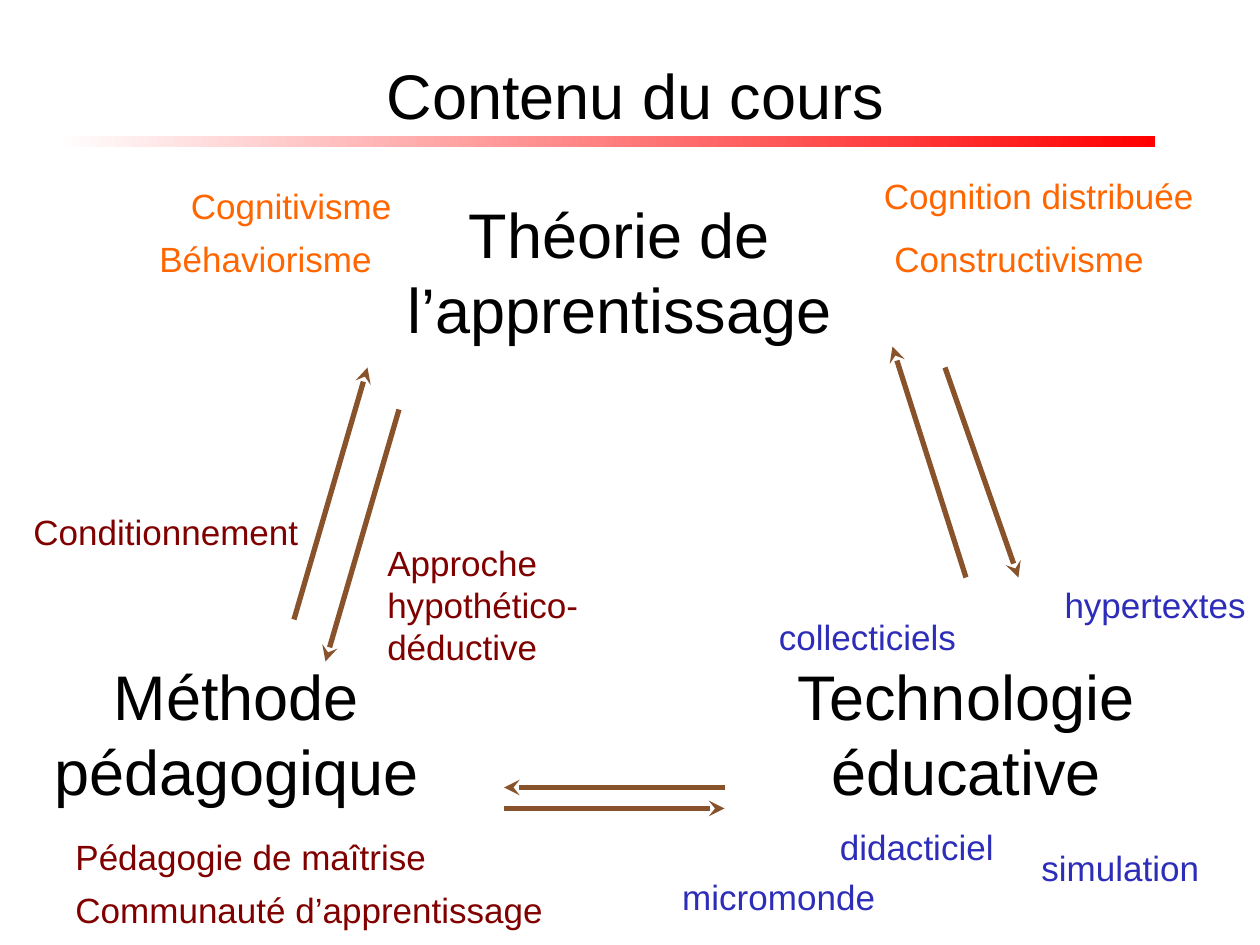
import pptx
import pptx.dml.color
import pptx.enum.shapes
import pptx.enum.text
import pptx.oxml.ns
import pptx.util
from dataclasses import dataclass
from lxml import etree


@dataclass(frozen=True)
class Theme:
    font: str = "Arial"
    heading: int = 36
    label: int = 20
    stroke: int = 3
    ink: str = "000000"
    paper: str = "FFFFFF"
    accent: str = "FF0000"
    arrow: str = "88522B"
    theory: str = "FF6600"
    method: str = "800000"
    technology: str = "2D2DB9"


class Deck:
    COLS, ROWS = 120, 90

    def __init__(self, prs, theme):
        self.prs, self.theme = prs, theme
        self.s = prs.slides.add_slide(prs.slide_layouts[5])

    def x(self, cols):
        return round(self.prs.slide_width * cols / self.COLS)

    def y(self, rows):
        return round(self.prs.slide_height * rows / self.ROWS)

    def box(self, col, row, cols, rows):
        return self.x(col), self.y(row), self.x(cols), self.y(rows)

    def color(self, name):
        return pptx.dml.color.RGBColor.from_string(getattr(self.theme, name))

    def style_text(self, tf, text, size, color, align):
        tf.text = text
        for p in tf.paragraphs:
            p.alignment = align
            for r in p.runs:
                r.font.name = self.theme.font
                r.font.size = pptx.util.Pt(size)
                r.font.color.rgb = self.color(color)

    def title(self, text, *box):
        sp = self.s.shapes.title
        sp.left, sp.top, sp.width, sp.height = self.box(*box)
        tf = sp.text_frame
        tf.vertical_anchor = pptx.enum.text.MSO_ANCHOR.MIDDLE
        self.style_text(tf, text, self.theme.heading, "ink",
                        pptx.enum.text.PP_ALIGN.CENTER)

    def rule(self, *box):
        sp = self.s.shapes.add_shape(
            pptx.enum.shapes.MSO_SHAPE.RECTANGLE, *self.box(*box))
        sp.shadow.inherit = False
        sp.line.fill.background()
        sp.fill.gradient()
        sp.fill.gradient_angle = 0
        for stop, name in zip(sp.fill.gradient_stops, ("paper", "accent")):
            stop.color.rgb = self.color(name)

    def text(self, text, box, size, color, align, wrap):
        tf = self.s.shapes.add_textbox(*self.box(*box)).text_frame
        tf.word_wrap = wrap
        tf.auto_size = pptx.enum.text.MSO_AUTO_SIZE.SHAPE_TO_FIT_TEXT
        self.style_text(tf, text, size, color, align)

    def pole(self, text, col, row, cols):
        self.text(text, (col, row, cols, 15.7), self.theme.heading, "ink",
                  pptx.enum.text.PP_ALIGN.CENTER, True)

    def label(self, text, color, col, row, cols, rows=5.25, wrap=False):
        self.text(text, (col, row, cols, rows), self.theme.label, color,
                  pptx.enum.text.PP_ALIGN.LEFT, wrap)

    def arrow(self, col1, row1, col2, row2):
        c = self.s.shapes.add_connector(
            pptx.enum.shapes.MSO_CONNECTOR.STRAIGHT,
            self.x(col1), self.y(row1), self.x(col2), self.y(row2))
        c.line.color.rgb = self.color("arrow")
        c.line.width = pptx.util.Pt(self.theme.stroke)
        qn = pptx.oxml.ns.qn
        props = c.element.spPr
        etree.SubElement(props.find(qn("a:ln")), qn("a:tailEnd"), type="stealth")
        etree.SubElement(props, qn("a:effectLst"))


POLES = [
    ("Méthode pédagogique", 0, 62, 45),
    ("Théorie de l’apprentissage", 30, 18, 58),
    ("Technologie éducative", 63, 62, 58),
]

ARROWS = [
    (38, 39, 31, 63),
    (28, 59, 35, 35),
    (90, 35, 97, 55),
    (92, 55, 85, 33),
    (69, 75, 48, 75),
    (48, 77, 69, 77),
]

LABELS = {
    "theory": [
        ("Béhaviorisme", 14, 22, 22.8),
        ("Cognitivisme", 17, 17, 21.7),
        ("Constructivisme", 84, 22, 26.4),
        ("Cognition distribuée", 83, 16, 32.2),
    ],
    "method": [
        ("Conditionnement", 2, 48, 27.8),
        ("Approche\nhypothético-déductive", 35.7, 51, 32.3, 13.3, True),
        ("Pédagogie de maîtrise", 6, 79, 36.1),
        ("Communauté d’apprentissage", 6, 84, 47.3),
    ],
    "technology": [
        ("collecticiels", 73, 58, 19.4),
        ("hypertextes", 100.2, 55, 19.8),
        ("didacticiel", 78.8, 78, 17.2),
        ("micromonde", 63.8, 82.8, 20.9),
        ("simulation", 98, 80, 17.6),
    ],
}


def main():
    prs = pptx.Presentation()
    prs.slide_width = pptx.util.Inches(10)
    prs.slide_height = pptx.util.Inches(7.5)
    deck = Deck(prs, Theme())
    deck.rule(5.2, 13, 104.8, 1)
    deck.title("Contenu du cours", 5, 3, 111, 12)
    for pole in POLES:
        deck.pole(*pole)
    for arrow in ARROWS:
        deck.arrow(*arrow)
    for color, labels in LABELS.items():
        for text, *place in labels:
            deck.label(text, color, *place)
    prs.save("out.pptx")


if __name__ == "__main__":
    main()
